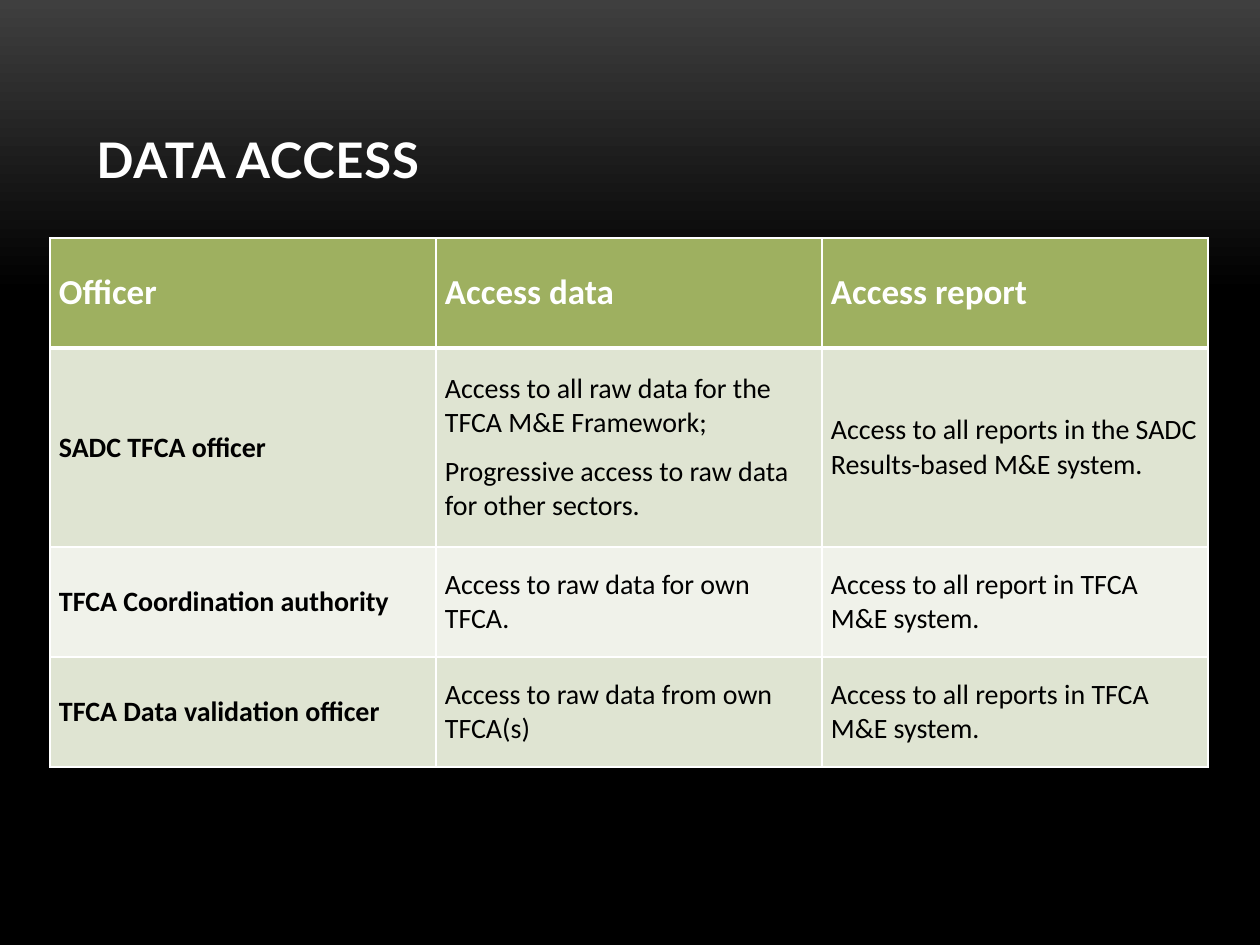
import pptx
import pptx.dml.color
import pptx.enum.text
import pptx.oxml
import pptx.oxml.ns
import pptx.util

PX = 914400 / 126
COLORS = {
    "top": "3F3F3F", "black": "000000", "white": "FFFFFF",
    "header": "9EB060", "odd": "DFE4D2", "even": "F0F2EA",
}
ROWS = [
    ["Officer", "Access data", "Access report"],
    ["SADC TFCA officer",
     "Access to all raw data for the TFCA M&E Framework;\n"
     "Progressive access to raw data for other sectors.",
     "Access to all reports in the SADC Results-based M&E system."],
    ["TFCA Coordination authority",
     "Access to raw data for own TFCA.",
     "Access to all report in TFCA M&E system."],
    ["TFCA Data validation officer",
     "Access to raw data from own TFCA(s)",
     "Access to all reports in TFCA M&E system."],
]
COLUMN_WIDTH = 386
ROW_HEIGHTS = [110, 199, 110, 110]


def px(length):
    return pptx.util.Emu(round(length * PX))


def rgb(name):
    return pptx.dml.color.RGBColor.from_string(COLORS[name])


def style_font(font, face, size, color, bold):
    font.name = face
    font.size = pptx.util.Pt(size)
    font.color.rgb = rgb(color)
    font.bold = bold


def paint_background(page):
    fill = page.background.fill
    fill.gradient()
    fill.gradient_angle = 270
    for stop, color, position in zip(fill.gradient_stops, ("top", "black"), (0, 0.31)):
        stop.color.rgb = rgb(color)
        stop.position = position


def add_title(page, text):
    box = page.shapes.add_textbox(px(84), px(38), px(1092), px(157))
    frame = box.text_frame
    frame.word_wrap = True
    frame.vertical_anchor = pptx.enum.text.MSO_ANCHOR.BOTTOM
    frame.text = text
    span = frame.paragraphs[0].runs[0]
    style_font(span.font, "Lato", 28, "white", True)
    span.font.element.set("spc", "50") if hasattr(span.font, "element") else \
        span._r.get_or_add_rPr().set("spc", "50")


def set_borders(cell, top, bottom):
    properties = cell._tc.get_or_add_tcPr()
    for side, points in (("L", 1), ("R", 1), ("T", top), ("B", bottom)):
        properties.append(pptx.oxml.parse_xml(
            f'<a:ln{side} {pptx.oxml.ns.nsdecls("a")} w="{pptx.util.Pt(points)}">'
            f'<a:solidFill><a:srgbClr val="{COLORS["white"]}"/></a:solidFill>'
            f'</a:ln{side}>'))


def fill_cell(cell, text, row, column):
    header = row == 0
    # Borders come before the fill in the cell properties
    set_borders(cell, top=3 if row == 1 else 1, bottom=3 if header else 1)
    cell.fill.solid()
    cell.fill.fore_color.rgb = rgb("header" if header else "odd" if row % 2 else "even")
    cell.margin_left = cell.margin_right = px(9)
    cell.margin_top = cell.margin_bottom = 0
    cell.vertical_anchor = pptx.enum.text.MSO_ANCHOR.MIDDLE
    cell.text_frame.text = text
    for index, para in enumerate(cell.text_frame.paragraphs):
        para.space_before = pptx.util.Pt(8 if index else 0)
        for span in para.runs:
            style_font(span.font, "Calibri", 20 if header else 16,
                       "white" if header else "black", header or column == 0)


def add_access_table(page):
    count = len(ROWS[0])
    table = page.shapes.add_table(
        len(ROWS), count, px(50), px(238),
        px(COLUMN_WIDTH * count), px(sum(ROW_HEIGHTS))).table
    for column in table.columns:
        column.width = px(COLUMN_WIDTH)
    for row, (texts, height) in enumerate(zip(ROWS, ROW_HEIGHTS)):
        table.rows[row].height = px(height)
        for column, text in enumerate(texts):
            fill_cell(table.cell(row, column), text, row, column)


def main():
    deck = pptx.Presentation()
    deck.slide_width, deck.slide_height = px(1260), px(945)
    page = deck.slides.add_slide(deck.slide_layouts[6])
    paint_background(page)
    add_title(page, "DATA ACCESS")
    add_access_table(page)
    deck.save("out.pptx")


if __name__ == "__main__":
    main()
